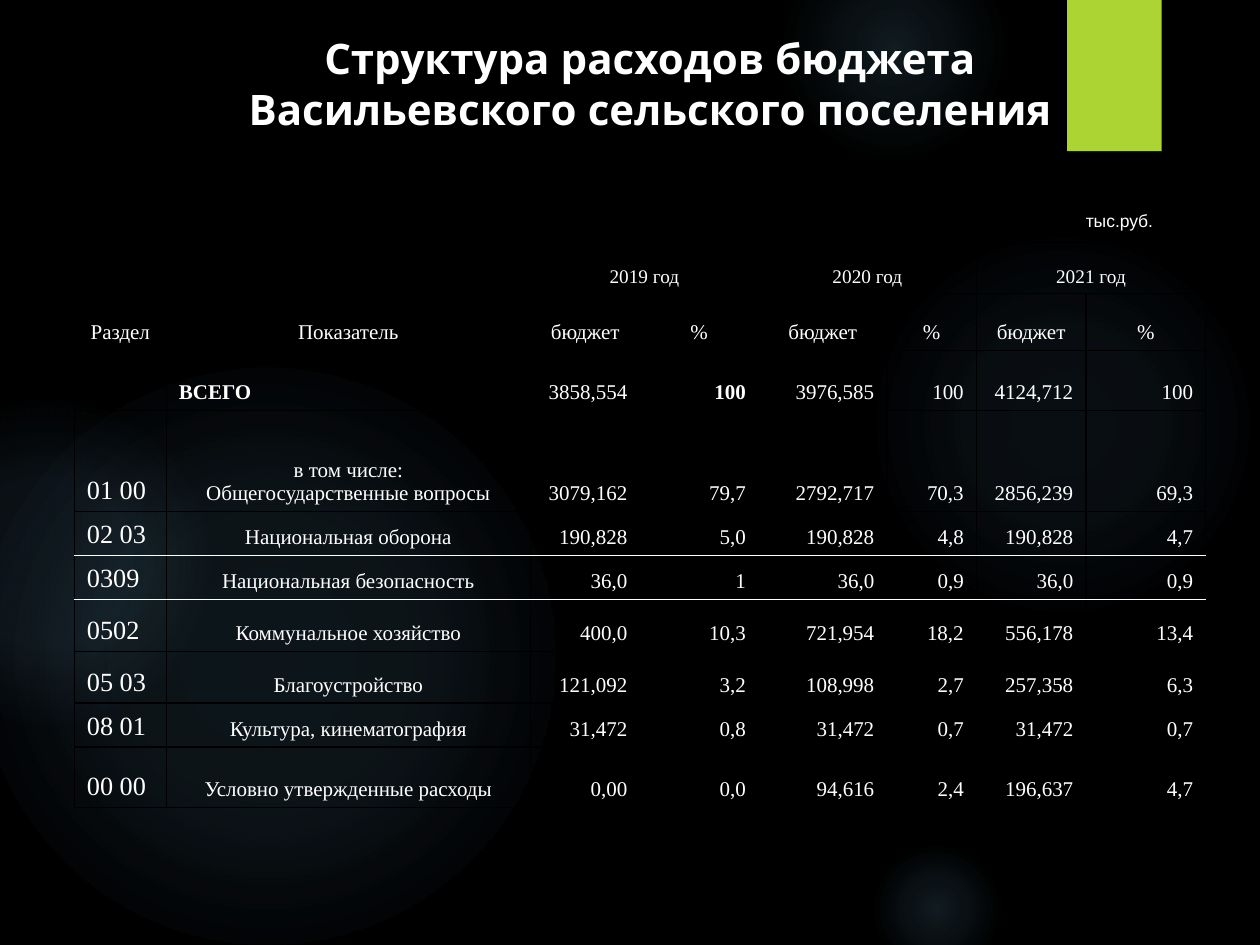
"""Build the slide on the expenditure structure of a rural settlement budget."""
from pptx import Presentation
from pptx import util as u
from pptx.dml.color import RGBColor
from pptx.enum import shapes, text
from pptx.oxml import parse_xml
from pptx.oxml.ns import nsdecls, qn

COLORS = {"black": "000000", "white": "FFFFFF", "glow": "7AC4F0", "green": "ACD433"}
LEFT, CENTER, RIGHT = text.PP_ALIGN.LEFT, text.PP_ALIGN.CENTER, text.PP_ALIGN.RIGHT


def write(frame, content, size=12, font="Times New Roman", bold=False, align=CENTER, hanging=0):
    frame.word_wrap = True
    frame.text = content
    for paragraph in frame.paragraphs:
        paragraph.alignment = align
        if hanging:
            margins = paragraph._p.get_or_add_pPr()
            margins.set("marL", str(u.Inches(hanging)))
            margins.set("indent", str(-u.Inches(hanging)))
        for run in paragraph.runs:
            run.font.size = u.Pt(size)
            run.font.name = font
            run.font.bold = bold
            run.font.color.rgb = RGBColor.from_string(COLORS["white"])


prs = Presentation()
prs.slide_width, prs.slide_height = u.Inches(10), u.Inches(7.5)
slide = prs.slides.add_slide(prs.slide_layouts[5])
slide.background.fill.solid()
slide.background.fill.fore_color.rgb = RGBColor.from_string(COLORS["black"])

glows = [
    (6.89, 1.83, 3.08, [(0, 7), (36, 6), (69, 0)]),
    (6.22, -0.5, 1.75, [(0, 14), (36, 7), (73, 0)]),
    (6.89, 6.67, 1.08, [(0, 14), (36, 7), (66, 0)]),
    (-0.17, 2.92, 4.58, [(0, 11), (36, 10), (75, 0)]),
    (-0.92, 3.17, 2.58, [(0, 8), (36, 8), (72, 0)]),
]
for left, top, diameter, stops in glows:
    glow = slide.shapes.add_shape(shapes.MSO_SHAPE.OVAL, u.Inches(left), u.Inches(top),
                                  u.Inches(diameter), u.Inches(diameter))
    glow.shadow.inherit = False
    glow.line.fill.background()
    glow.fill.background()
    stop_list = "".join(
        f'<a:gs pos="{position * 1000}"><a:srgbClr val="{COLORS["glow"]}">'
        f'<a:alpha val="{alpha * 1000}"/></a:srgbClr></a:gs>' for position, alpha in stops)
    gradient = parse_xml(
        f'<a:gradFill {nsdecls("a")} rotWithShape="1"><a:gsLst>{stop_list}</a:gsLst>'
        '<a:path path="circle"><a:fillToRect l="50000" t="50000" r="50000" b="50000"/>'
        '</a:path></a:gradFill>')
    properties = glow.element.spPr
    properties.replace(properties.find(qn("a:noFill")), gradient)

tab = slide.shapes.add_shape(shapes.MSO_SHAPE.RECTANGLE, u.Inches(8.47), u.Inches(0),
                             u.Inches(0.75), u.Inches(1.2))
tab.shadow.inherit = False
tab.fill.solid()
tab.fill.fore_color.rgb = RGBColor.from_string(COLORS["green"])
tab.line.fill.background()

title = slide.shapes.title
title.element.getparent().append(title.element)
title.left, title.top = u.Inches(0.91), u.Inches(0.21)
title.width, title.height = u.Inches(8.5), u.Inches(1.25)
title.text_frame.auto_size = text.MSO_AUTO_SIZE.NONE
title.text_frame.vertical_anchor = text.MSO_ANCHOR.TOP
write(title.text_frame, "Структура расходов бюджета\vВасильевского сельского поселения",
      size=24, font="League Spartan", bold=True)

column_widths = [0.73, 2.89, 0.87, 0.94, 1.02, 0.71, 0.87, 0.95]
row_heights = [0.41, 0.45, 0.48, 0.8, 0.35, 0.35, 0.41, 0.41, 0.35, 0.48]
rows = [
    ["Раздел", "Показатель", "2019 год", "", "2020 год", "", "2021 год", ""],
    ["", ""] + ["бюджет", "%"] * 3,
    ["", "ВСЕГО", "3858,554", "100", "3976,585", "100", "4124,712", "100"],
    ["01 00", "в том числе:\nОбщегосударственные вопросы",
     "3079,162", "79,7", "2792,717", "70,3", "2856,239", "69,3"],
    ["02 03", "Национальная оборона", "190,828", "5,0", "190,828", "4,8", "190,828", "4,7"],
    ["0309", "Национальная безопасность", "36,0", "1", "36,0", "0,9", "36,0", "0,9"],
    ["0502", "Коммунальное хозяйство", "400,0", "10,3", "721,954", "18,2", "556,178", "13,4"],
    ["05 03", "Благоустройство", "121,092", "3,2", "108,998", "2,7", "257,358", "6,3"],
    ["08 01", "Культура, кинематография", "31,472", "0,8", "31,472", "0,7", "31,472", "0,7"],
    ["00 00", "Условно утвержденные расходы", "0,00", "0,0", "94,616", "2,4", "196,637", "4,7"],
]
budget = slide.shapes.add_table(len(rows), len(column_widths), u.Inches(0.59), u.Inches(1.92),
                                u.Inches(sum(column_widths)), u.Inches(sum(row_heights))).table
budget.first_row = budget.horz_banding = False
for column, width in zip(budget.columns, column_widths):
    column.width = u.Inches(width)
for row, height in zip(budget.rows, row_heights):
    row.height = u.Inches(height)
for c in (0, 1):
    budget.cell(0, c).merge(budget.cell(1, c))
for c in (2, 4, 6):
    budget.cell(0, c).merge(budget.cell(0, c + 1))

for r, values in enumerate(rows):
    for c, value in enumerate(values):
        cell = budget.cell(r, c)
        cell.fill.background()
        cell.vertical_anchor = text.MSO_ANCHOR.BOTTOM
        edges = {"lnL": "black", "lnR": "black",
                 "lnT": "white" if r in (5, 6) else "black",
                 "lnB": "white" if r in (4, 5) else "black"}
        for order, (edge, color) in enumerate(edges.items()):
            cell._tc.get_or_add_tcPr().insert(order, parse_xml(
                f'<a:{edge} {nsdecls("a")} w="12700"><a:solidFill>'
                f'<a:srgbClr val="{COLORS[color]}"/></a:solidFill></a:{edge}>'))
        if value:
            size = 11 if r == 0 and c > 1 else 15 if r > 2 and c == 0 else 12
            if r < 2 or (c == 1 and r > 2):
                align = CENTER
            else:
                align = RIGHT if c > 1 else LEFT
            write(cell.text_frame, value, size=size, align=align,
                  bold=r == 2 and c in (1, 3), hanging=0.38)

unit = slide.shapes.add_textbox(u.Inches(7.52), u.Inches(1.62), u.Inches(1.73), u.Inches(0.27))
write(unit.text_frame, "тыс.руб.", size=10, font="Arial", align=RIGHT)

prs.save("out.pptx")
